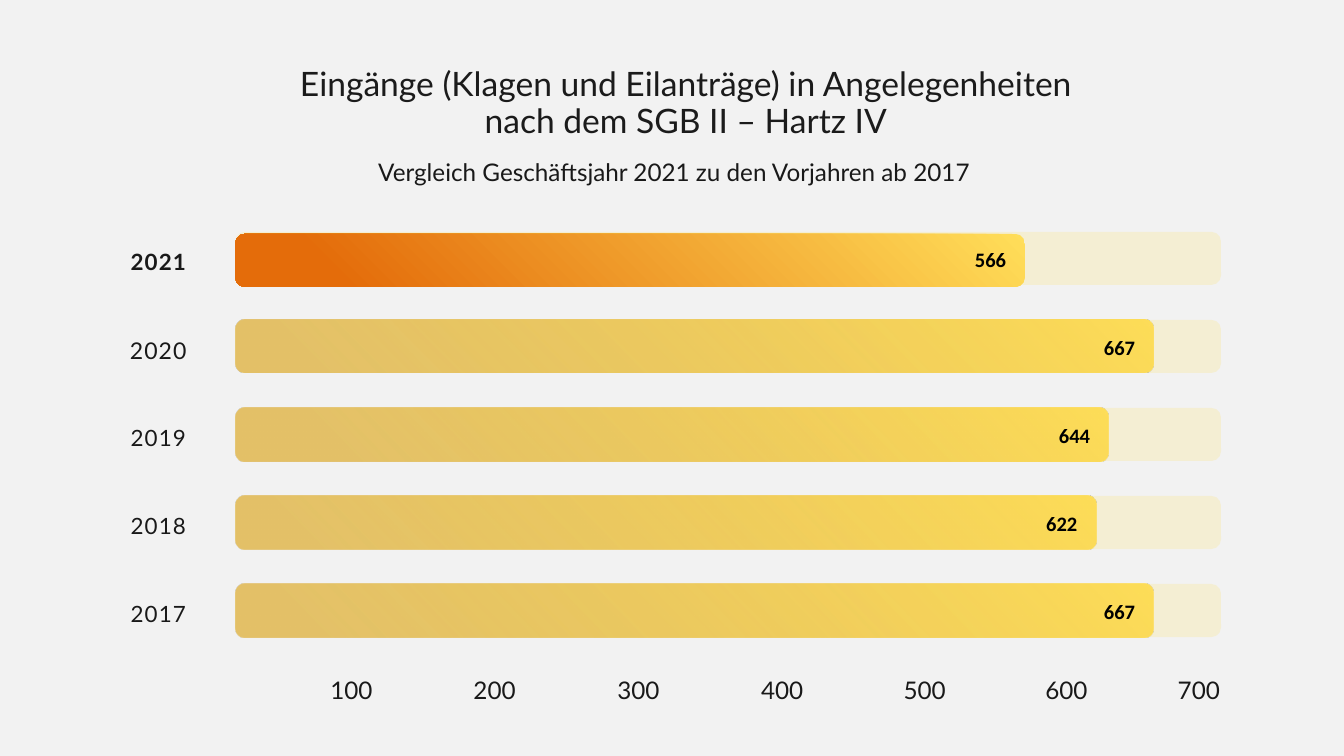
from pptx import Presentation
from pptx.dml.color import RGBColor
from pptx.enum.shapes import MSO_SHAPE as SHAPE
from pptx.enum.text import MSO_ANCHOR as ANCHOR, MSO_AUTO_SIZE as AUTO, PP_ALIGN as ALIGN
from pptx.oxml import parse_xml
from pptx.oxml.ns import nsdecls
from pptx.util import Inches, Pt

WIDTH, HEIGHT = 20, 11.25
BAR_LEFT, BAR_TOP, BAR_HEIGHT, PITCH = 3.5, 3.45, 0.79, 1.31
TRACK_WIDTH = 14.67
INK, YELLOW, GOLD, ORANGE = "191919", "FFDE59", "DDAE38", "E46C0A"
ROWS = [
    ("2021", "566", 11.75, 0.03, 24, (13, ORANGE, 100)),
    ("2020", "667", 13.67, 0, 24.7, (9, GOLD, 68)),
    ("2019", "644", 13, 0, 24, (13, GOLD, 68)),
    ("2018", "622", 12.81, 0, 24, (9, GOLD, 68)),
    ("2017", "667", 13.67, 0, 24, (9, GOLD, 68)),
]
TICK_LEFTS = [4.39, 6.52, 8.66, 10.8, 12.92, 15.03, 17]


def color(value):
    return RGBColor.from_string(value)


def write(sp, text, size, line=None, name="Lato", ink=INK, bold=False, spc=None,
          align=ALIGN.CENTER, inset=0, wrap=True):
    tf = sp.text_frame
    frame = {"word_wrap": wrap, "auto_size": AUTO.NONE, "vertical_anchor": ANCHOR.TOP}
    if inset is not None:
        frame |= {f"margin_{side}": inset for side in ("left", "right", "top", "bottom")}
    for key, value in frame.items():
        setattr(tf, key, value)
    tf.text = text
    p = tf.paragraphs[0]
    p.alignment = align
    if line:
        p.line_spacing = Pt(line)
    for r in p.runs:
        for key, value in {"name": name, "size": Pt(size), "bold": bold}.items():
            setattr(r.font, key, value)
        r.font.color.rgb = color(ink)
        if spc:
            r.font._element.set("spc", str(spc))


def add_text(s, text, box, size, **style):
    sp = s.shapes.add_textbox(*map(Inches, box))
    write(sp, text, size, **style)


def add_bar(s, top, width, stops):
    sp = s.shapes.add_shape(SHAPE.ROUNDED_RECTANGLE,
                            *map(Inches, (BAR_LEFT, top, width, BAR_HEIGHT)))
    sp.shadow.inherit = False
    sp.adjustments[0] = 0.18
    sp.line.fill.background()
    gs = "".join(
        f'<a:gs pos="{pos * 1000}"><a:srgbClr val="{value}">'
        f'<a:alpha val="{alpha * 1000}"/></a:srgbClr></a:gs>'
        for pos, value, alpha in stops)
    grad = parse_xml(
        f'<a:gradFill {nsdecls("a")} rotWithShape="1"><a:gsLst>{gs}</a:gsLst>'
        '<a:path path="circle"><a:fillToRect t="100000" r="100000"/></a:path></a:gradFill>')
    sp._element.spPr.find(".//{*}prstGeom").addnext(grad)


def add_track(s, top):
    sp = s.shapes.add_shape(SHAPE.ROUNDED_RECTANGLE,
                            *map(Inches, (BAR_LEFT, top, TRACK_WIDTH, BAR_HEIGHT)))
    sp.shadow.inherit = False
    sp.adjustments[0] = 0.18
    sp.line.fill.background()
    sp.fill.solid()
    sp.fill.fore_color.rgb = color(YELLOW)
    fill = sp._element.spPr.find(".//{*}srgbClr")
    fill.append(parse_xml(f'<a:alpha {nsdecls("a")} val="20000"/>'))


def add_row(s, index, year, value, width, shift, size, start):
    top = BAR_TOP + index * PITCH
    add_text(s, year, (0.5, top + 0.14, 3.71, 0.47), size,
             line=size * 1.5, bold=index == 0, spc=120)
    add_track(s, top)
    add_bar(s, top + shift, width, [start, (100, YELLOW, 100)])
    add_text(s, value, (BAR_LEFT + width - 0.84, top + 0.18, 0.67, 0.47), 22,
             name="Calibri", ink="000000", bold=True,
             align=ALIGN.LEFT, inset=None, wrap=False)


def add_title(s, text, box):
    sp = s.shapes.title
    for key, value in zip(("left", "top", "width", "height"), box):
        setattr(sp, key, Inches(value))
    write(sp, text, 36, line=39.6, ink="1B1B1B")


def main():
    prs = Presentation()
    prs.slide_width, prs.slide_height = Inches(WIDTH), Inches(HEIGHT)
    s = prs.slides.add_slide(prs.slide_layouts[5])
    s.background.fill.solid()
    s.background.fill.fore_color.rgb = color("F2F2F2")
    add_title(s, "Eingänge (Klagen und Eilanträge) in Angelegenheiten\v"
                 "nach dem SGB II – Hartz IV", (1.33, 0.98, 17.75, 1.12))
    add_text(s, "Vergleich Geschäftsjahr 2021 zu den Vorjahren ab 2017",
             (1.16, 2.27, 17.75, 0.47), 26, line=36.4)
    for index, row in enumerate(ROWS):
        add_row(s, index, *row)
    for index, left in enumerate(TICK_LEFTS, 1):
        add_text(s, str(index * 100), (left, 9.98, 1.68, 0.46), 26, line=36.4)
    prs.save("out.pptx")


if __name__ == "__main__":
    main()
